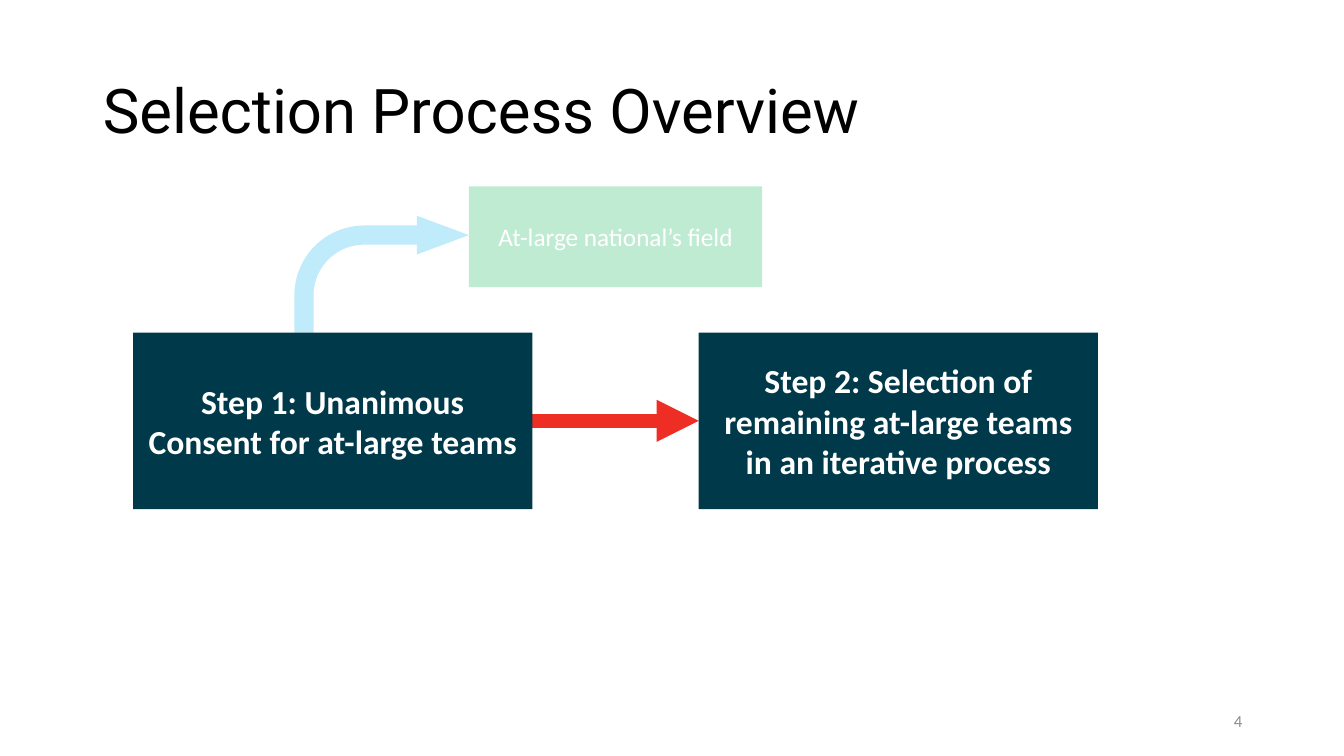
from dataclasses import dataclass

from lxml import etree
from pptx import Presentation
from pptx.dml.color import RGBColor
from pptx.enum import shapes, text
from pptx.oxml import ns
from pptx.util import Inches, Pt

BLACK = RGBColor(0x00, 0x00, 0x00)
WHITE = RGBColor(0xFF, 0xFF, 0xFF)
GRAY = RGBColor(0x8C, 0x8C, 0x8C)
NAVY = RGBColor(0x00, 0x39, 0x4A)
GREEN = RGBColor(0x00, 0xB0, 0x50)
BLUE = RGBColor(0x00, 0xB0, 0xF0)
RED = RGBColor(0xEE, 0x2E, 0x24)

STEP_TOP, STEP_WIDTH, STEP_HEIGHT = 3.3, 3.96, 1.75
STEP_ONE, STEP_TWO = 1.32, 6.93


@dataclass
class Block:
    left: float
    top: float
    width: float
    height: float
    fill: RGBColor
    label: str = ""
    size: int = 18
    bold: bool = False
    opacity: int = 100
    kind: shapes.MSO_SHAPE = shapes.MSO_SHAPE.RECTANGLE
    adjust: tuple[float, ...] = ()


BLOCKS = [
    Block(4.65, 1.85, 2.91, 1, GREEN, "At-large national’s field", opacity=25),
    Block(2.92, 2.14, 1.73, 1.16, BLUE, opacity=25,
          kind=shapes.MSO_SHAPE.BENT_ARROW, adjust=(0.164, 0.166, 0.445, 0.597)),
    Block(STEP_ONE, STEP_TOP, STEP_WIDTH, STEP_HEIGHT, NAVY,
          "Step 1: Unanimous Consent for at-large teams", 24, True),
    Block(STEP_TWO, STEP_TOP, STEP_WIDTH, STEP_HEIGHT, NAVY,
          "Step 2: Selection of remaining at-large teams in an iterative process", 24, True),
]


def write(shape, words: str, face: str, size: int, color: RGBColor,
          align: text.PP_ALIGN, bold: bool = False) -> None:
    frame = shape.text_frame
    frame.word_wrap = True
    frame.vertical_anchor = text.MSO_ANCHOR.MIDDLE
    frame.text = words
    para = frame.paragraphs[0]
    para.alignment = align
    para.font.name = face
    para.font.size = Pt(size)
    para.font.bold = bold
    para.font.color.rgb = color


def draw(slide, block: Block) -> None:
    shape = slide.shapes.add_shape(
        block.kind, Inches(block.left), Inches(block.top),
        Inches(block.width), Inches(block.height))
    shape.shadow.inherit = False
    shape.line.fill.background()
    shape.fill.solid()
    shape.fill.fore_color.rgb = block.fill
    for index, value in enumerate(block.adjust):
        shape.adjustments[index] = value
    if block.opacity < 100:
        color = shape._element.spPr.find(ns.qn("a:solidFill"))[0]
        etree.SubElement(color, ns.qn("a:alpha"), val=str(block.opacity * 1000))
    if block.label:
        write(shape, block.label, "Calibri", block.size, WHITE,
              text.PP_ALIGN.CENTER, block.bold)


def link(slide) -> None:
    """Draw the red arrow from step 1 to step 2."""
    mid = Inches(STEP_TOP + STEP_HEIGHT / 2)
    arrow = slide.shapes.add_connector(
        shapes.MSO_CONNECTOR.STRAIGHT, Inches(STEP_ONE + STEP_WIDTH), mid,
        Inches(STEP_TWO), mid)
    arrow.line.color.rgb = RED
    arrow.line.width = Pt(10)
    etree.SubElement(arrow.line._get_or_add_ln(), ns.qn("a:tailEnd"), type="triangle")
    etree.SubElement(arrow._element.spPr, ns.qn("a:effectLst"))


def main() -> None:
    deck = Presentation()
    deck.slide_width, deck.slide_height = Inches(13.33), Inches(7.5)
    slide = deck.slides.add_slide(deck.slide_layouts[5])

    title = slide.shapes.title
    title.left, title.top = Inches(0.92), Inches(0.4)
    title.width, title.height = Inches(11.5), Inches(1.45)
    write(title, "Selection Process Overview", "Roboto", 44, BLACK, text.PP_ALIGN.LEFT)
    title.text_frame.paragraphs[0].line_spacing = 0.9

    number = slide.shapes.add_textbox(Inches(9.42), Inches(6.95), Inches(3), Inches(0.4))
    write(number, "4", "Calibri", 12, GRAY, text.PP_ALIGN.RIGHT)

    link(slide)
    for block in BLOCKS:
        draw(slide, block)
    deck.save("out.pptx")


if __name__ == "__main__":
    main()
